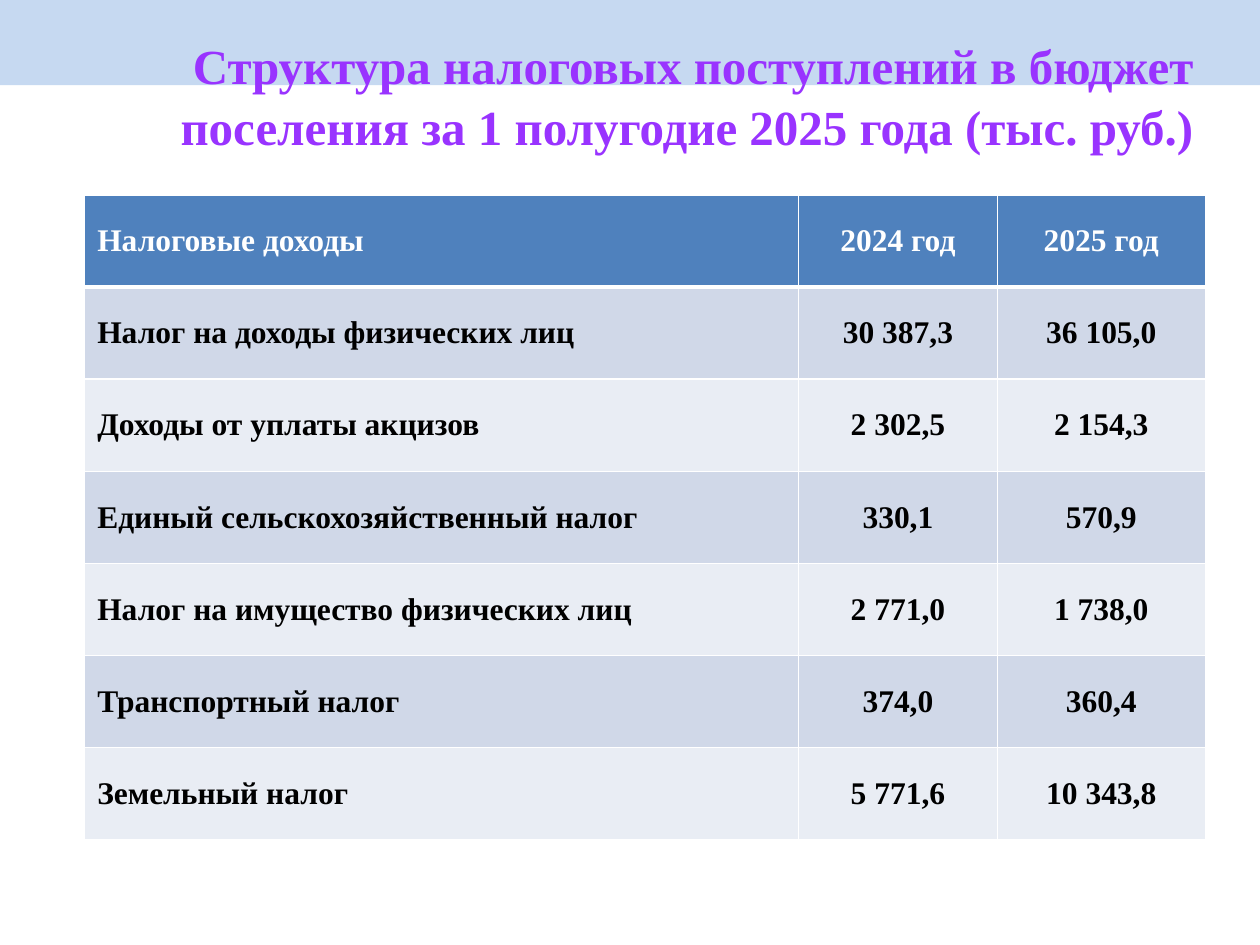
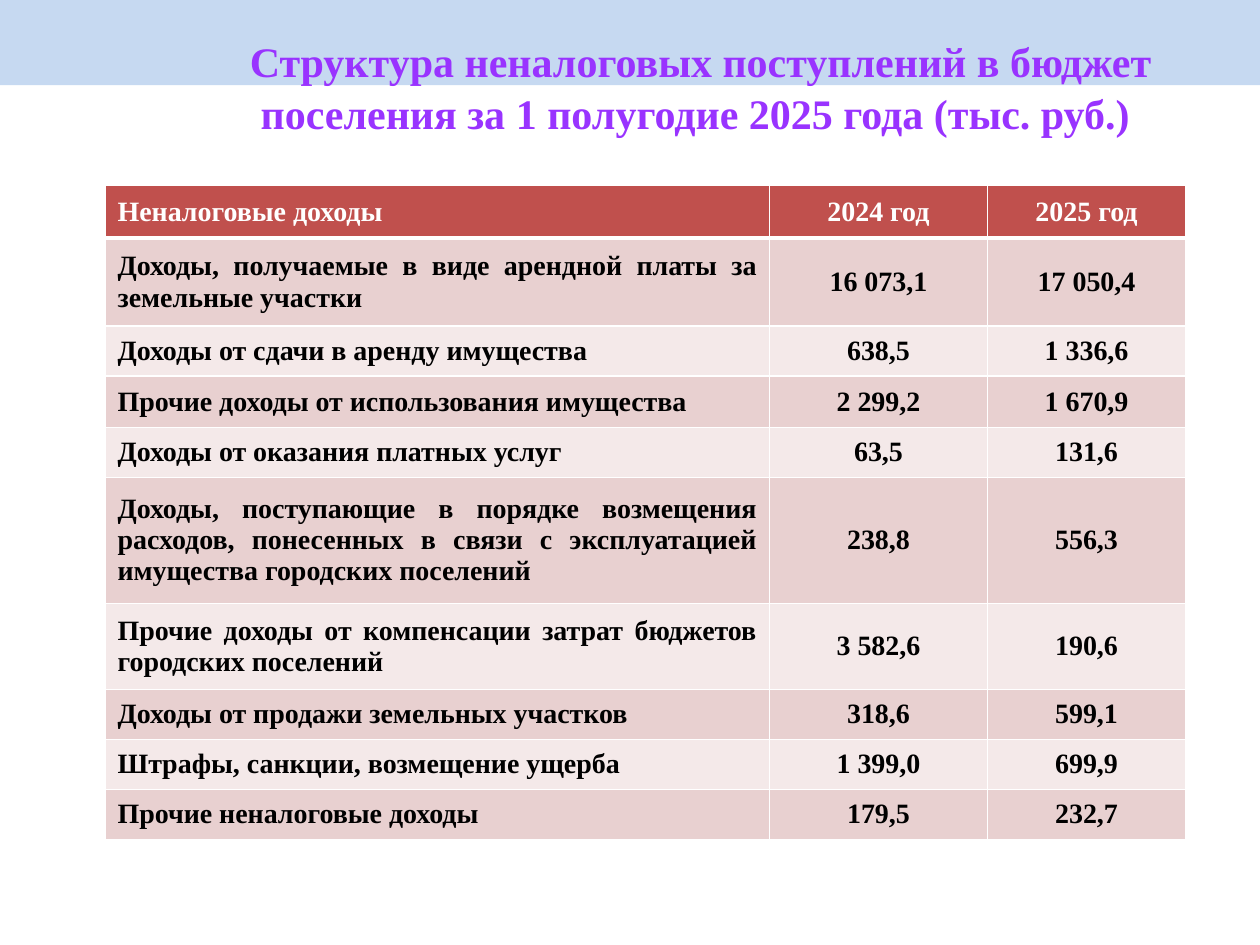
from dataclasses import dataclass

from lxml import etree
from pptx import Presentation
from pptx.dml.color import RGBColor
from pptx.enum.shapes import MSO_SHAPE
from pptx.enum.text import MSO_ANCHOR, PP_ALIGN
from pptx.oxml.ns import qn
from pptx.util import Pt

RECT = MSO_SHAPE.RECTANGLE
TOP, MIDDLE = MSO_ANCHOR.TOP, MSO_ANCHOR.MIDDLE
LEFT, CENTER, JUSTIFY = PP_ALIGN.LEFT, PP_ALIGN.CENTER, PP_ALIGN.JUSTIFY


@dataclass(frozen=True)
class Theme:
    font: str = "Times New Roman"
    band: str = "C6D9F1"
    title: str = "9933FF"
    edge: str = "467AB8"
    white: str = "FFFFFF"
    black: str = "000000"
    # Header fill, then the two alternating row fills
    blue: tuple = ("4F81BD", "D0D8E8", "E9EDF4")
    red: tuple = ("C0504D", "E8D0D0", "F4E9E9")
    big: int = 28
    mid: int = 24
    text: int = 18
    small: int = 16
    thin: int = 1
    thick: int = 3


THEME = Theme()
WIDTH, HEIGHT = 720, 540
YEARS = ("2024 год", "2025 год")

TAXES = [
    ("Налоговые доходы", *YEARS),
    ("Налог на доходы физических лиц", "30 387,3", "36 105,0"),
    ("Доходы от уплаты акцизов", "2 302,5", "2 154,3"),
    ("Единый сельскохозяйственный налог", "330,1", "570,9"),
    ("Налог на имущество физических лиц", "2 771,0", "1 738,0"),
    ("Транспортный налог", "374,0", "360,4"),
    ("Земельный налог", "5 771,6", "10 343,8"),
]
OTHERS = [
    ("Неналоговые доходы", *YEARS),
    ("Доходы, получаемые в виде арендной платы за земельные участки",
     "16 073,1", "17 050,4"),
    ("Доходы от сдачи в аренду имущества", "638,5", "1 336,6"),
    ("Прочие доходы от использования имущества", "2 299,2", "1 670,9"),
    ("Доходы от оказания платных услуг", "63,5", "131,6"),
    ("Доходы, поступающие в порядке возмещения расходов, понесенных в связи "
     "с эксплуатацией имущества городских поселений", "238,8", "556,3"),
    ("Прочие доходы от компенсации затрат бюджетов городских поселений",
     "3 582,6", "190,6"),
    ("Доходы от продажи земельных участков", "318,6", "599,1"),
    ("Штрафы, санкции, возмещение ущерба", "1 399,0", "699,9"),
    ("Прочие неналоговые доходы", "179,5", "232,7"),
]


def color(code):
    return RGBColor.from_string(code)


def style(para, size, code, align):
    """Format the runs of a paragraph in the shared bold face."""
    para.alignment = align
    for run in para.runs:
        font = run.font
        font.name, font.size, font.bold = THEME.font, Pt(size), True
        font.color.rgb = color(code)


def line(tag, width, code):
    """Make a solid line element for a cell side or a text outline."""
    node = etree.Element(qn(tag), w=str(Pt(width)))
    fill = etree.SubElement(node, qn("a:solidFill"))
    etree.SubElement(fill, qn("a:srgbClr"), val=code)
    return node


def add_band(slide, box):
    band = slide.shapes.add_shape(RECT, *map(Pt, box))
    band.shadow.inherit = False
    band.fill.solid()
    band.fill.fore_color.rgb = color(THEME.band)
    band.line.fill.background()


def add_title(slide, box, text, size):
    frame = slide.shapes.add_textbox(*map(Pt, box)).text_frame
    frame.word_wrap = True
    frame.vertical_anchor = TOP
    frame.text = text
    para = frame.paragraphs[0]
    para.line_spacing = 1.04
    style(para, size, THEME.title, CENTER)
    for run in para.runs:
        run.font._element.insert(0, line("a:ln", 0.83, THEME.edge))


def fill_cell(cell, row, col, text, fills, size):
    head = row == 0
    # White rules, with a heavy one under the header
    sides = {"L": THEME.thin, "R": THEME.thin,
             "T": THEME.thick if row == 1 else THEME.thin,
             "B": THEME.thick if head else THEME.thin}
    props = cell._tc.get_or_add_tcPr()
    for side, width in sides.items():
        props.append(line(f"a:ln{side}", width, THEME.white))
    cell.fill.solid()
    cell.fill.fore_color.rgb = color(fills[0 if head else 2 - row % 2])
    # Cell text
    cell.vertical_anchor = MIDDLE
    cell.text = text
    align = CENTER if col else LEFT if head else JUSTIFY
    style(cell.text_frame.paragraphs[0], size,
          THEME.white if head else THEME.black, align)


def add_grid(slide, spot, cols, rows, data, fills, size):
    box = (*spot, sum(cols), sum(rows))
    grid = slide.shapes.add_table(len(rows), len(cols), *map(Pt, box)).table
    for col, width in zip(grid.columns, cols):
        col.width = Pt(width)
    for row, height in zip(grid.rows, rows):
        row.height = Pt(height)
    for r, items in enumerate(data):
        for c, text in enumerate(items):
            fill_cell(grid.cell(r, c), r, c, text, fills, size)


def add_page(deck, kind, left, head, **grid):
    """Build a page: top band, title from left to the edge, table."""
    slide = deck.slides.add_slide(deck.slide_layouts[6])
    add_band(slide, (0, 0, WIDTH, 48.75))
    title = (f"Структура {kind} поступлений в бюджет поселения "
             "за 1 полугодие 2025 года (тыс. руб.) ")
    add_title(slide, (left, 15.5, WIDTH - left, 90), title, head)
    add_grid(slide, **grid)


def main():
    deck = Presentation()
    deck.slide_width, deck.slide_height = Pt(WIDTH), Pt(HEIGHT)
    # Tax income
    add_page(deck, "налоговых", 72, THEME.big,
             spot=(48.4, 111.4), cols=(408, 113.5, 118.9),
             rows=[52.65] * len(TAXES), data=TAXES,
             fills=THEME.blue, size=THEME.text)
    # Other income
    low, pair = 28.6, 49.2
    add_page(deck, "неналоговых", 80.6, THEME.mid,
             spot=(60, 105.7), cols=(379.8, 124.4, 113.4),
             rows=[30.4, 50.2, low, 29.4, low, 72, pair, low, low, low],
             data=OTHERS, fills=THEME.red, size=THEME.small)
    deck.save("out.pptx")


if __name__ == "__main__":
    main()
